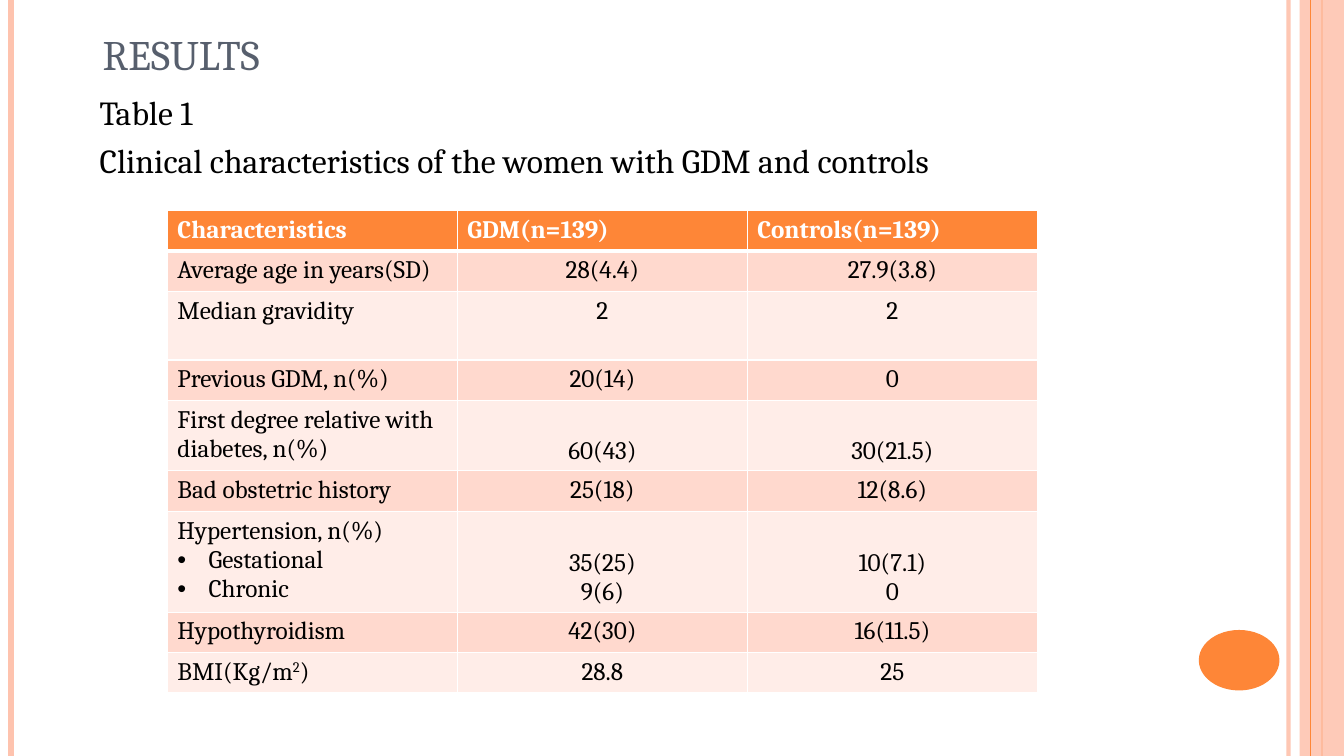
from collections import namedtuple

from lxml import etree
from pptx import Presentation
from pptx import util as u
from pptx.dml.color import RGBColor
from pptx.enum import shapes, text
from pptx.oxml import parse_xml
from pptx.oxml.ns import nsdecls, qn

Box = namedtuple("Box", "x y w h")
COLS, ROWS = 1333, 750  # slide grid, each square 0.01 inch


class Theme:
    font = "Cambria"
    orange, peach, white = "FE8637", "FEC3AE", "FFFFFF"
    slate, black = "575F6D", "000000"
    bands = ("FFD9CE", "FFEDE8")
    title, body, cell = 30, 24, 18


HEADER = ("Characteristics", "GDM(n=139)", "Controls(n=139)")
# row height in grid rows, label lines, one value list per group
RESULTS = [
    (39, ["Average age in years(SD)"], ["28(4.4)"], ["27.9(3.8)"]),
    (68, ["Median gravidity"], ["2"], ["2"]),
    (39, ["Previous GDM, n(%)"], ["20(14)"], ["0"]),
    (68, ["First degree relative with diabetes, n(%)"], ["60(43)"], ["30(21.5)"]),
    (39, ["Bad obstetric history"], ["25(18)"], ["12(8.6)"]),
    (97, ["Hypertension, n(%)", "•Gestational", "•Chronic"],
     ["35(25)", "9(6)"], ["10(7.1)", "0"]),
    (39, ["Hypothyroidism"], ["42(30)"], ["16(11.5)"]),
    (39, ["BMI(Kg/m^2^)"], ["28.8"], ["25"]),
]
HEADER_ROWS = 39
LOW_VALUES = {"60(43)", "30(21.5)", "35(25)", "10(7.1)"}  # first values set low


def grid(n):
    return u.Inches(n / 100)


def rgb(value):
    return RGBColor.from_string(value)


def set_alpha(fill_parent, percent):
    clr = fill_parent.find(".//" + qn("a:srgbClr"))
    etree.SubElement(clr, qn("a:alpha")).set("val", str(percent * 1000))


def add_run(p, words, size, color, bold=False):
    r = p.add_run()
    r.text = words
    for name, value in {"name": Theme.font, "size": u.Pt(size), "bold": bold}.items():
        setattr(r.font, name, value)
    r.font.color.rgb = rgb(color)
    return r


def add_textbox(s, box, anchor):
    tf = s.shapes.add_textbox(*map(grid, box)).text_frame
    tf.word_wrap = True
    tf.vertical_anchor = anchor
    return tf


def add_rule(s, box, x, color, width, alpha=None):
    """Vertical line over the full height of the box."""
    line = s.shapes.add_connector(
        shapes.MSO_CONNECTOR.STRAIGHT,
        grid(box.x + x), grid(box.y), grid(box.x + x), grid(box.y + box.h))
    line.line.color.rgb = rgb(color)
    line.line.width = u.Pt(width)
    if alpha:
        set_alpha(line.line._get_or_add_ln(), alpha)
    etree.SubElement(line._element.spPr, qn("a:effectLst"))


def add_solid(s, kind, box, color):
    sp = s.shapes.add_shape(kind, *map(grid, box))
    sp.shadow.inherit = False
    sp.fill.solid()
    sp.fill.fore_color.rgb = rgb(color)
    sp.line.fill.background()
    return sp


def edge_bars(s, box):
    # Rules behind the side band
    add_rule(s, box, 1278, Theme.peach, 3, 93)
    add_rule(s, box, 11, Theme.peach, 4.5)
    add_rule(s, box, 1311, Theme.orange, 1.5)
    # Side band, its front rule and the page dot
    band = add_solid(s, shapes.MSO_SHAPE.RECTANGLE,
                     Box(box.x + box.w - 44, box.y, 44, box.h), Theme.peach)
    set_alpha(band._element.spPr, 87)
    add_rule(s, box, 1300, Theme.orange, 0.75)
    add_solid(s, shapes.MSO_SHAPE.OVAL,
              Box(box.x + box.w - 144, box.y + box.h - 125, 80, 60), Theme.orange)


def heading(s, box):
    # Title
    tf = add_textbox(s, box._replace(h=71), text.MSO_ANCHOR.BOTTOM)
    r = add_run(tf.paragraphs[0], "RESULTS", Theme.title, Theme.slate)
    r.font._element.set("cap", "small")
    # Table caption
    caption = Box(box.x - 3, box.y + 74, box.w, box.h - 74)
    tf = add_textbox(s, caption, text.MSO_ANCHOR.TOP)
    lines = ("Table 1", "Clinical characteristics of the women with GDM and controls")
    for i, line in enumerate(lines):
        p = tf.add_paragraph() if i else tf.paragraphs[0]
        p.space_before = u.Pt(6)
        add_run(p, line, Theme.body, Theme.black)


def style_cell(cell, fill, bottom):
    tc_pr = cell._tc.get_or_add_tcPr()
    for side, width in {"L": 1, "R": 1, "T": 1, "B": bottom}.items():
        tc_pr.append(parse_xml(
            f'<a:ln{side} {nsdecls("a")} w="{u.Pt(width)}"><a:solidFill>'
            f'<a:srgbClr val="{Theme.white}"/></a:solidFill></a:ln{side}>'))
    cell.fill.solid()
    cell.fill.fore_color.rgb = rgb(fill)


def fill_cell(cell, lines, color, bold=False, centred=False):
    tf = cell.text_frame
    for i, line in enumerate(lines):
        p = tf.add_paragraph() if i else tf.paragraphs[0]
        p.alignment = text.PP_ALIGN.CENTER if centred else text.PP_ALIGN.LEFT
        if line.startswith("•"):
            p_pr = p._p.get_or_add_pPr()
            p_pr.set("marL", str(grid(31)))
            p_pr.set("indent", str(-grid(31)))
            etree.SubElement(p_pr, qn("a:buFont")).set("typeface", "Arial")
            etree.SubElement(p_pr, qn("a:buChar")).set("char", "•")
        # Odd pieces between carets are superscript
        for k, piece in enumerate(line.lstrip("•").split("^")):
            r = add_run(p, piece, Theme.cell, color, bold)
            if k % 2:
                r.font._element.set("baseline", "30000")


def results_table(s, box):
    table = s.shapes.add_table(len(RESULTS) + 1, len(HEADER), *map(grid, box)).table
    table.first_row = table.horz_banding = False
    for col in table.columns:
        col.width = grid(box.w / len(HEADER))
    # Header row
    table.rows[0].height = grid(HEADER_ROWS)
    for c, words in enumerate(HEADER):
        style_cell(table.cell(0, c), Theme.orange, 3)
        fill_cell(table.cell(0, c), [words], Theme.white, bold=True)
    # Banded rows
    for n, (height, *cells) in enumerate(RESULTS, 1):
        table.rows[n].height = grid(height)
        for c, lines in enumerate(cells):
            cell = table.cell(n, c)
            style_cell(cell, Theme.bands[(n - 1) % 2], 1)
            fill_cell(cell, lines, Theme.black, centred=c > 0)
            if lines[0] in LOW_VALUES:
                cell.vertical_anchor = text.MSO_ANCHOR.BOTTOM


def main():
    prs = Presentation()
    prs.slide_width, prs.slide_height = grid(COLS), grid(ROWS)
    s = prs.slides.add_slide(prs.slide_layouts[6])
    edge_bars(s, Box(0, 0, COLS, ROWS))
    heading(s, Box(92, 12, 1150, 180))
    results_table(s, Box(166, 209, 863, HEADER_ROWS + sum(row[0] for row in RESULTS)))
    prs.save("out.pptx")


if __name__ == "__main__":
    main()
